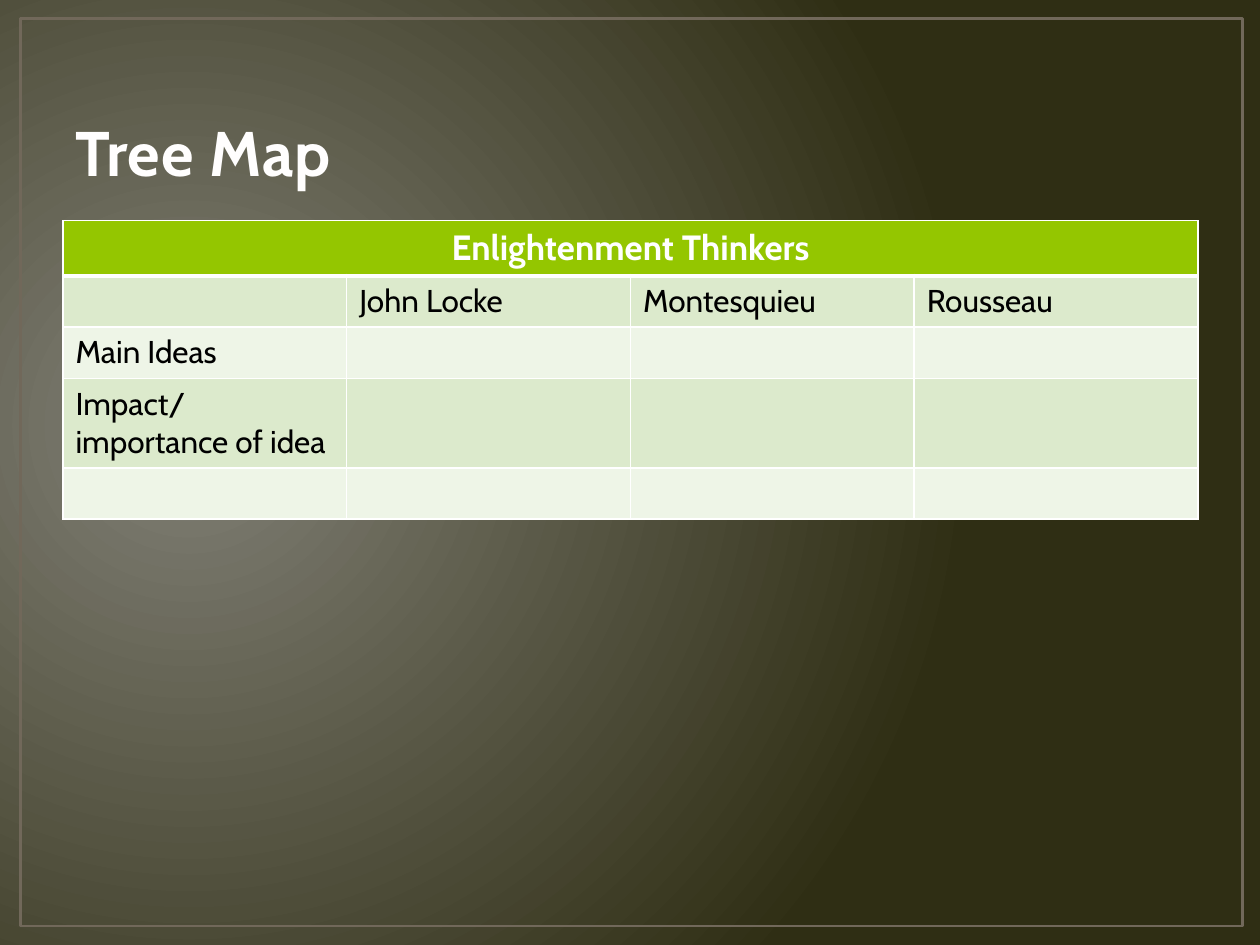
from dataclasses import dataclass

from lxml.etree import SubElement
from pptx import Presentation
from pptx.dml.color import RGBColor
from pptx.enum.shapes import MSO_SHAPE
from pptx.enum.text import MSO_ANCHOR, PP_ALIGN
from pptx.oxml import parse_xml
from pptx.oxml.ns import nsdecls, qn
from pptx.util import Cm, Pt

FONT = "Cabin"
WHITE = RGBColor(0xFF, 0xFF, 0xFF)
BLACK = RGBColor(0x00, 0x00, 0x00)
TITLE_WHITE = RGBColor(0xFF, 0xFE, 0xFE)
TITLE_OUTLINE = RGBColor(0x4A, 0x63, 0x00)
FRAME = RGBColor(0x71, 0x68, 0x5A)
GLOW = RGBColor(0x81, 0x80, 0x76)
DARK = RGBColor(0x2F, 0x2E, 0x14)
HEADER_GREEN = RGBColor(0x94, 0xC6, 0x00)
BANDS = (RGBColor(0xDC, 0xEA, 0xCC), RGBColor(0xEE, 0xF5, 0xE7))


@dataclass
class TextStyle:
    size: float
    color: RGBColor
    bold: bool = False


@dataclass
class TableRow:
    texts: tuple
    height: float = 1.03


TITLE_STYLE = TextStyle(36, TITLE_WHITE, True)
HEADER_STYLE = TextStyle(20, WHITE, True)
BODY_STYLE = TextStyle(18, BLACK)
COLUMN_COUNT = 4
COLUMN_WIDTH = 5.72
ROWS = (
    TableRow(("Enlightenment Thinkers", "", "", ""), 1.09),
    TableRow(("", "John Locke", "Montesquieu", "Rousseau")),
    TableRow(("Main Ideas", "", "", "")),
    TableRow(("Impact/importance of idea", "", "", ""), 1.8),
    TableRow(("", "", "", "")),
)


def add_run(paragraph, text: str, style: TextStyle):
    run = paragraph.add_run()
    run.text = text
    run.font.name = FONT
    run.font.size = Pt(style.size)
    run.font.bold = style.bold
    run.font.color.rgb = style.color
    return run


def set_background(slide) -> None:
    fill = slide.background.fill
    fill.gradient()
    for stop, color in zip(fill.gradient_stops, (GLOW, DARK)):
        stop.color.rgb = color
    # Turn the linear gradient into a circular one
    gradient = slide.element.find(".//" + qn("a:gradFill"))
    linear = gradient.find(qn("a:lin"))
    circle = parse_xml(
        f'<a:path {nsdecls("a")} path="circle">'
        '<a:fillToRect l="15000" t="50000" r="85000" b="60000"/></a:path>'
    )
    gradient.replace(linear, circle)


def add_frame(slide) -> None:
    frame = slide.shapes.add_shape(
        MSO_SHAPE.RECTANGLE, Cm(0.41), Cm(0.38), Cm(24.64), Cm(18.29)
    )
    frame.shadow.inherit = False
    frame.fill.background()
    frame.line.color.rgb = FRAME
    frame.line.width = Pt(1.5)
    # Keep the frame behind everything else
    slide.shapes.element.insert(2, frame.element)


def add_title(slide, text: str) -> None:
    title = slide.shapes.title
    title.left, title.top = Cm(1.27), Cm(0.76)
    title.width, title.height = Cm(22.86), Cm(3.18)
    title.text_frame.vertical_anchor = MSO_ANCHOR.BOTTOM
    paragraph = title.text_frame.paragraphs[0]
    paragraph.alignment = PP_ALIGN.LEFT
    run = add_run(paragraph, text, TITLE_STYLE)
    properties = run.font._element if hasattr(run.font, "_element") else run._r.get_or_add_rPr()
    properties.set("spc", "50")
    properties.insert(0, parse_xml(
        f'<a:ln {nsdecls("a")} w="{Pt(1.05)}"><a:solidFill>'
        f'<a:srgbClr val="{TITLE_OUTLINE}"/></a:solidFill></a:ln>'
    ))


def set_borders(cell, bottom_width: float) -> None:
    properties = cell._tc.get_or_add_tcPr()
    widths = {"a:lnL": 1, "a:lnR": 1, "a:lnT": 1, "a:lnB": bottom_width}
    for position, (tag, width) in enumerate(widths.items()):
        line = SubElement(properties, qn(tag), w=str(Pt(width)))
        fill = SubElement(line, qn("a:solidFill"))
        SubElement(fill, qn("a:srgbClr"), val=str(WHITE))
        properties.insert(position, line)


def add_thinkers_table(slide) -> None:
    table = slide.shapes.add_table(
        len(ROWS), COLUMN_COUNT, Cm(1.27), Cm(4.45),
        Cm(COLUMN_WIDTH * COLUMN_COUNT), Cm(sum(row.height for row in ROWS)),
    ).table
    for column in table.columns:
        column.width = Cm(COLUMN_WIDTH)
    for row_index, row in enumerate(ROWS):
        table.rows[row_index].height = Cm(row.height)
        is_header = row_index == 0
        for column_index, text in enumerate(row.texts):
            cell = table.cell(row_index, column_index)
            cell.fill.solid()
            cell.fill.fore_color.rgb = HEADER_GREEN if is_header else BANDS[(row_index - 1) % 2]
            set_borders(cell, 3 if is_header else 1)
            paragraph = cell.text_frame.paragraphs[0]
            if is_header:
                paragraph.alignment = PP_ALIGN.CENTER
            if text:
                add_run(paragraph, text, HEADER_STYLE if is_header else BODY_STYLE)
    # The heading spans all columns
    table.cell(0, 0).merge(table.cell(0, COLUMN_COUNT - 1))


def main() -> None:
    presentation = Presentation()
    presentation.slide_width, presentation.slide_height = Cm(25.4), Cm(19.05)
    slide = presentation.slides.add_slide(presentation.slide_layouts[5])
    set_background(slide)
    add_frame(slide)
    add_title(slide, "Tree Map")
    add_thinkers_table(slide)
    presentation.save("out.pptx")


if __name__ == "__main__":
    main()
